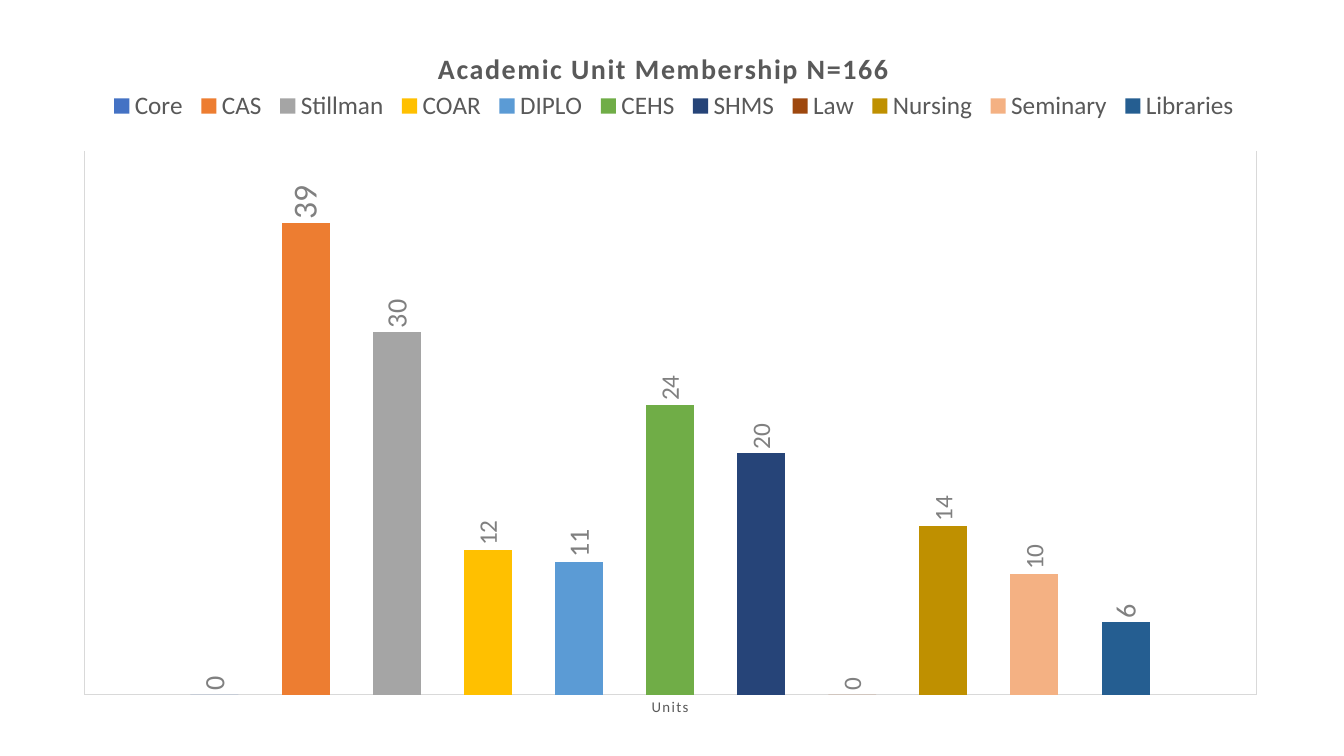
import pptx
import pptx.chart.data
import pptx.dml.color
import pptx.enum.chart
import pptx.oxml
import pptx.oxml.ns
import pptx.util

TITLE = "Academic Unit Membership N=166"
GROUP = "Units"
# name, members, bar colour, label size
UNITS = [
    ("Core", 0, "4472C4", 20),
    ("CAS", 39, "ED7D31", 24),
    ("Stillman", 30, "A5A5A5", 20),
    ("COAR", 12, "FFC000", 18),
    ("DIPLO", 11, "5B9BD5", 20),
    ("CEHS", 24, "70AD47", 18),
    ("SHMS", 20, "264478", 18),
    ("Law", 0, "9E480E", 18),
    ("Nursing", 14, "BF9000", 18),
    ("Seminary", 10, "F4B183", 18),
    ("Libraries", 6, "255E91", 20),
]
FONT = "Calibri"
TEXT, LABEL, RULE = "595959", "808080", "D9D9D9"

# left, top, width, height in px
SLIDE = (1344, 756)
FRAME = (60, 14, 1220, 717)
PLOT = (84, 151, 1172, 544)
KEY = (104, 90, 1140, 32)
HEAD = (433, 44)
PX = 914400 / 100.8


def emu(px):
    return pptx.util.Emu(round(px * PX))


def paint(color, code):
    color.rgb = pptx.dml.color.RGBColor.from_string(code)


def style(font, size, code, bold=False):
    font.name, font.size, font.bold = FONT, pptx.util.Pt(size), bold
    paint(font.color, code)


def rule(line):
    paint(line.color, RULE)
    line.width = pptx.util.Pt(0.75)


def place(part, box, index, inner=False):
    """Fix a chart part at a px box, as shares of the chart frame."""
    for old in part.xpath("c:layout"):
        part.remove(old)
    left, top, wide, high = FRAME
    shares = [(box[0] - left) / wide, (box[1] - top) / high]
    shares += [size / full for size, full in zip(box[2:], (wide, high))]
    tags = '<c:layoutTarget val="inner"/>' if inner else ""
    tags += '<c:xMode val="edge"/><c:yMode val="edge"/>'
    for tag, share in zip("xywh", shares):
        tags += f'<c:{tag} val="{share:.4f}"/>'
    part.insert(index, pptx.oxml.parse_xml(
        f'<c:layout {pptx.oxml.ns.nsdecls("c")}>'
        f"<c:manualLayout>{tags}</c:manualLayout></c:layout>"))


def add_bars(slide):
    data = pptx.chart.data.CategoryChartData()
    data.categories = [GROUP]
    for name, count, _, _ in UNITS:
        data.add_series(name, [count])
    kind = pptx.enum.chart.XL_CHART_TYPE.COLUMN_CLUSTERED
    chart = slide.shapes.add_chart(kind, *map(emu, FRAME), data).chart
    style(chart.font, 10, "000000")
    return chart


def style_bars(plot):
    plot.gap_width, plot.overlap = 444, -90
    plot.vary_by_categories = False
    for bar, (_, _, code, size) in zip(plot.series, UNITS):
        bar.format.fill.solid()
        paint(bar.format.fill.fore_color, code)
        labels = bar.data_labels
        labels.show_value = True
        labels.position = pptx.enum.chart.XL_LABEL_POSITION.OUTSIDE_END
        style(labels.font, size, LABEL)


def style_axes(chart):
    units, count = chart.category_axis, chart.value_axis
    none = pptx.enum.chart.XL_TICK_MARK.NONE
    units.major_tick_mark = units.minor_tick_mark = none
    units.has_major_gridlines = True
    rule(units.major_gridlines.format.line)
    rule(units.format.line)
    style(units.tick_labels.font, 10.6, TEXT)
    count.minimum_scale, count.maximum_scale = 0, 45
    count.has_major_gridlines = False
    count.visible = False


def add_head(chart):
    chart.has_title = True
    run = chart.chart_title.text_frame.paragraphs[0].add_run()
    run.text = TITLE
    style(run.font, 20, TEXT, bold=True)


def add_key(chart):
    chart.has_legend = True
    chart.legend.position = pptx.enum.chart.XL_LEGEND_POSITION.TOP
    chart.legend.include_in_layout = False
    style(chart.legend.font, 18, TEXT)


def finish(root):
    """Set the parts' places, the upright labels and the letter spacing."""
    place(root.xpath("//c:plotArea")[0], PLOT, 0, inner=True)
    place(root.xpath("//c:legend")[0], KEY, 1)
    place(root.xpath("//c:chart/c:title")[0], HEAD, 1)
    for body in root.xpath("//c:dLbls/c:txPr/a:bodyPr"):
        body.set("rot", "-5400000")
        body.set("vert", "horz")
    for props in root.xpath("//c:catAx//a:defRPr | //c:chart/c:title//a:rPr"):
        props.set("spc", "100")


def main():
    deck = pptx.Presentation()
    deck.slide_width, deck.slide_height = map(emu, SLIDE)
    chart = add_bars(deck.slides.add_slide(deck.slide_layouts[6]))
    style_bars(chart.plots[0])
    style_axes(chart)
    add_head(chart)
    add_key(chart)
    finish(chart.element if hasattr(chart, "element") else chart._chartSpace)
    deck.save("out.pptx")


if __name__ == "__main__":
    main()
